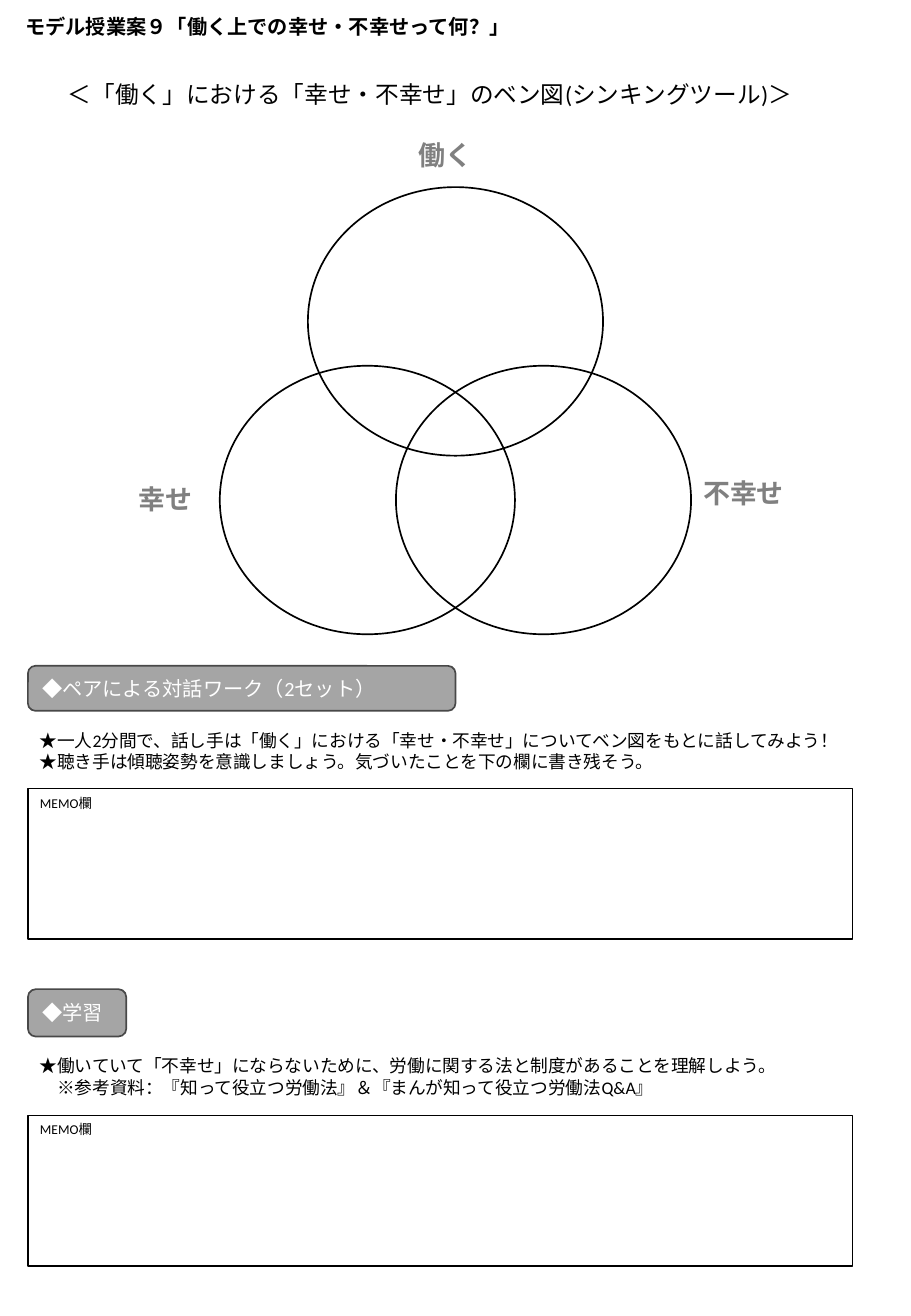
from dataclasses import dataclass

from pptx import Presentation, util as u
from pptx.dml.color import RGBColor
from pptx.enum import shapes, text

BLACK = RGBColor(0x00, 0x00, 0x00)
WHITE = RGBColor(0xFF, 0xFF, 0xFF)
LABEL_GRAY = RGBColor(0x80, 0x80, 0x80)
HEADING_FILL = RGBColor(0xA5, 0xA5, 0xA5)
HEADING_LINE = RGBColor(0x48, 0x48, 0x48)
FONT = "Calibri"

# The page is a grid of square cells, 75 columns wide and 108.3 rows high
COLUMNS, ROWS = 75, 108.3
CELL = u.Inches(0.1)


@dataclass
class Box:
    left: float
    top: float
    width: float
    height: float

    def inner(self, left, top, width, height):
        return Box(self.left + left, self.top + top, width, height)

    def lengths(self):
        return [round(cells * CELL) for cells in
                (self.left, self.top, self.width, self.height)]


def write(shape, lines, size, color=BLACK, bold=False):
    frame = shape.text_frame
    frame.word_wrap = True
    frame.text = "\n".join(lines)
    for paragraph in frame.paragraphs:
        paragraph.alignment = text.PP_ALIGN.LEFT
        for run in paragraph.runs:
            run.font.name = FONT
            run.font.size = u.Pt(size)
            run.font.bold = bold
            run.font.color.rgb = color


def add_text(parent, box, lines, size, color=BLACK, bold=False):
    textbox = parent.add_textbox(*box.lengths())
    write(textbox, lines, size, color, bold)
    textbox.text_frame.auto_size = text.MSO_AUTO_SIZE.SHAPE_TO_FIT_TEXT


def add_outline(parent, kind, box, fill=None, line=BLACK):
    shape = parent.add_shape(kind, *box.lengths())
    shape.shadow.inherit = False
    if fill is None:
        shape.fill.background()
    else:
        shape.fill.solid()
        shape.fill.fore_color.rgb = fill
    shape.line.color.rgb = line
    shape.line.width = u.Pt(1)
    return shape


def add_titles(slide, box):
    add_text(slide.shapes, box.inner(1.1, 0.7, 46.5, 3),
             ["モデル授業案９「働く上での幸せ・不幸せって何？」"], 12, bold=True)
    add_text(slide.shapes, box.inner(4.6, 6.1, 65.4, 5.7),
             ["＜「働く」における「幸せ・不幸せ」のベン図(シンキングツール)＞"], 14)


def add_venn(slide, box):
    group = slide.shapes.add_group_shape().shapes
    width, height = 24.3, 22.1
    right, bottom = box.width - width, box.height - height

    # Circles: lower right, top centre, lower left
    for left, top in ((right, bottom), (right / 2, 0), (0, bottom)):
        add_outline(group, shapes.MSO_SHAPE.OVAL,
                    box.inner(left, top, width, height))

    # Labels outside the circles
    for label, left, top, label_width in (
            ("働く", 15.4, -4.5, 7.7),
            ("不幸せ", box.width, 23.3, 11.2),
            ("幸せ", -7.7, 23.8, 7.7)):
        add_text(group, box.inner(left, top, label_width, 3.7),
                 [label], 16, LABEL_GRAY, bold=True)


def add_section(slide, box, heading, heading_width, heading_height, lines):
    # Heading badge
    badge = add_outline(slide.shapes, shapes.MSO_SHAPE.ROUNDED_RECTANGLE,
                        box.inner(0, 0, heading_width, heading_height),
                        HEADING_FILL, HEADING_LINE)
    write(badge, [heading], 12, WHITE)
    badge.text_frame.vertical_anchor = text.MSO_ANCHOR.MIDDLE

    # Memo field along the bottom
    memo_height = 12.4
    memo = add_outline(slide.shapes, shapes.MSO_SHAPE.RECTANGLE,
                       box.inner(0, box.height - memo_height,
                                 box.width, memo_height), WHITE)
    write(memo, ["MEMO欄"], 8)
    memo.text_frame.vertical_anchor = text.MSO_ANCHOR.TOP

    # Instructions between the two
    add_text(slide.shapes, box.inner(0, heading_height + 1.05, 69.3, 4.5),
             lines, 10.5)


def main():
    presentation = Presentation()
    presentation.slide_width = round(COLUMNS * CELL)
    presentation.slide_height = round(ROWS * CELL)
    slide = presentation.slides.add_slide(presentation.slide_layouts[6])

    add_titles(slide, Box(0, 0, COLUMNS, 12))
    add_venn(slide, Box(18.1, 15.4, 38.8, 36.8))
    add_section(
        slide, Box(2.3, 54.8, 67.9, 22.5),
        "◆ペアによる対話ワーク（2セット）", 35.2, 3.7,
        ["★一人2分間で、話し手は「働く」における「幸せ・不幸せ」についてベン図をもとに話してみよう！",
         "★聴き手は傾聴姿勢を意識しましょう。気づいたことを下の欄に書き残そう。"])
    add_section(
        slide, Box(2.3, 81.4, 67.9, 22.8),
        "◆学習", 8.1, 3.9,
        ["★働いていて「不幸せ」にならないために、労働に関する法と制度があることを理解しよう。",
         "　※参考資料：『知って役立つ労働法』＆『まんが知って役立つ労働法Q&A』"])

    presentation.save("out.pptx")


if __name__ == "__main__":
    main()
